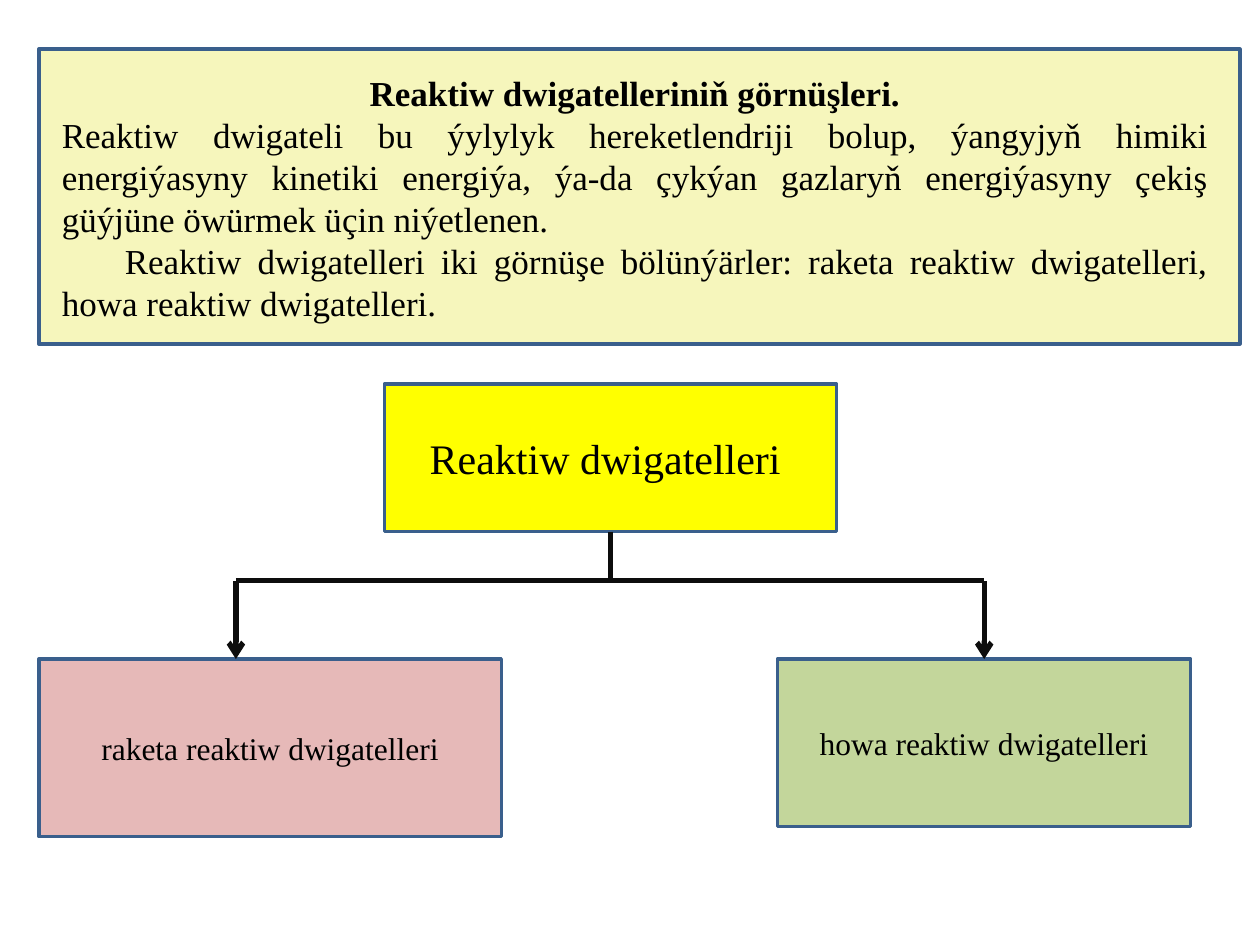
from lxml import etree
from pptx import Presentation
from pptx import util as u
from pptx.dml.color import RGBColor
from pptx.enum import shapes, text
from pptx.oxml.ns import qn

FONT = "Times New Roman"
BLACK, BORDER, ARROW = "000000", "3A5F8C", "0D0D0D"
CENTER, JUSTIFY = text.PP_ALIGN.CENTER, text.PP_ALIGN.JUSTIFY

INTRO = [
    ("Reaktiw dwigatelleriniň görnüşleri.", CENTER, True),
    ("Reaktiw dwigateli bu ýylylyk hereketlendriji bolup, ýangyjyň himiki "
     "energiýasyny kinetiki energiýa, ýa-da çykýan gazlaryň energiýasyny çekiş "
     "güýjüne öwürmek üçin niýetlenen.", JUSTIFY, False),
    ("\tReaktiw dwigatelleri iki görnüşe bölünýärler: raketa reaktiw "
     "dwigatelleri, howa reaktiw dwigatelleri.", JUSTIFY, False),
]
PANEL = (22.3, 28.1, 686.2, 168.5)
INTRO_AREA = (28.1, 33.8, 669.6, 157.7)
BOXES = [
    ("Reaktiw dwigatelleri ", 24, "FFFF00", (219.6, 219.6, 258.5, 84.2)),
    ("raketa reaktiw dwigatelleri", 18, "E6B9B8", (22.3, 376.6, 264.2, 101.5)),
    ("howa reaktiw dwigatelleri", 18, "C3D69B", (444.2, 376.6, 236.2, 95.8)),
]
LEFT_X, RIGHT_X, BRANCH_Y = 134.8, 562.4, 331.9


def color(value):
    return RGBColor.from_string(value)


def add_text(paragraph, content, size, align, bold=False):
    paragraph.alignment = align
    run = paragraph.add_run()
    run.text = content
    run.font.name = FONT
    run.font.size = u.Pt(size)
    run.font.bold = bold
    run.font.color.rgb = color(BLACK)


def add_box(slide, area, fill):
    box = slide.shapes.add_shape(shapes.MSO_SHAPE.RECTANGLE, *map(u.Pt, area))
    box.shadow.inherit = False
    box.fill.solid()
    box.fill.fore_color.rgb = color(fill)
    box.line.color.rgb = color(BORDER)
    box.line.width = u.Pt(2)
    box.text_frame.vertical_anchor = text.MSO_ANCHOR.MIDDLE
    return box


def add_line(slide, start, end, arrow=False):
    line = slide.shapes.add_connector(
        shapes.MSO_CONNECTOR.STRAIGHT, *map(u.Pt, start + end))
    line.line.color.rgb = color(ARROW)
    line.line.width = u.Pt(3)
    if arrow:
        etree.SubElement(line.line._get_or_add_ln(), qn("a:tailEnd"), type="arrow")
    etree.SubElement(line.element.spPr, qn("a:effectLst"))


def add_intro(slide):
    title = slide.shapes.title
    title.left, title.top, title.width, title.height = map(u.Pt, INTRO_AREA)
    frame = title.text_frame
    frame.word_wrap = True
    frame.auto_size = text.MSO_AUTO_SIZE.NONE
    frame.vertical_anchor = text.MSO_ANCHOR.MIDDLE
    for index, (content, align, bold) in enumerate(INTRO):
        paragraph = frame.add_paragraph() if index else frame.paragraphs[0]
        add_text(paragraph, content, 20, align, bold)
    panel = add_box(slide, PANEL, "F6F6BC")
    title.element.addprevious(panel.element)


def main():
    presentation = Presentation()
    presentation.slide_width, presentation.slide_height = u.Pt(720), u.Pt(540)
    slide = presentation.slides.add_slide(presentation.slide_layouts[5])
    add_intro(slide)

    for content, size, fill, area in BOXES:
        box = add_box(slide, area, fill)
        add_text(box.text_frame.paragraphs[0], content, size, CENTER)

    left, top, width, height = BOXES[0][3]
    stem_x = left + width / 2
    add_line(slide, (LEFT_X, BRANCH_Y), (RIGHT_X, BRANCH_Y))
    add_line(slide, (stem_x, top + height), (stem_x, BRANCH_Y))
    for x, (*_, area) in zip((LEFT_X, RIGHT_X), BOXES[1:]):
        add_line(slide, (x, BRANCH_Y), (x, area[1]), arrow=True)

    presentation.save("out.pptx")


if __name__ == "__main__":
    main()
